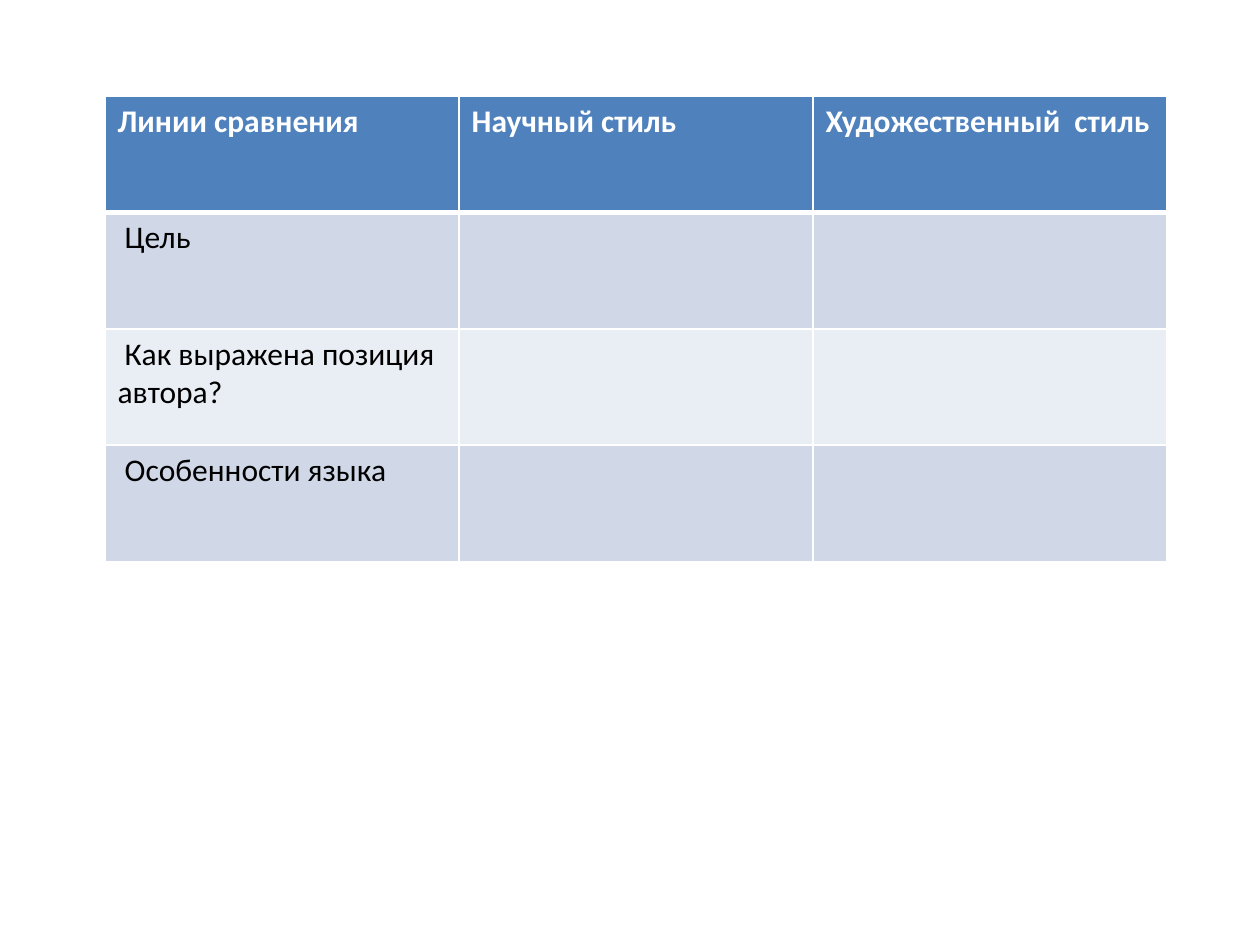
from dataclasses import dataclass

from lxml.etree import SubElement
from pptx import Presentation
from pptx.dml.color import RGBColor
from pptx.oxml.ns import qn
from pptx.util import Inches, Pt


@dataclass(frozen=True)
class Theme:
    """Colours, type and line widths of the slide."""
    font: str = "Calibri"
    size: int = 18
    header: str = "4F81BD"
    bands: tuple = ("D0D8E8", "E9EDF4")
    light: str = "FFFFFF"
    dark: str = "000000"
    thin: int = 1
    thick: int = 3


T = Theme()
W, H = Inches(10), Inches(7.5)
ROWS = [
    ["Линии сравнения", "Научный стиль", "Художественный  стиль"],
    [" Цель", "", ""],
    [" Как выражена позиция автора?", "", ""],
    [" Особенности языка", "", ""],
]


def add_text(tf, text, color=T.dark, size=T.size, bold=False):
    """Write one formatted run into the first paragraph."""
    r = tf.paragraphs[0].add_run()
    r.text = text
    r.font.name, r.font.size, r.font.bold = T.font, Pt(size), bold
    r.font.color.rgb = RGBColor.from_string(color)


def add_borders(cell, **widths):
    """Draw the cell's borders, before its fill is set."""
    tcPr = cell._tc.get_or_add_tcPr()
    for side in "LRTB":
        ln = SubElement(tcPr, qn(f"a:ln{side}"), w=str(Pt(widths.get(side, T.thin))))
        SubElement(SubElement(ln, qn("a:solidFill")), qn("a:srgbClr"), val=T.light)


def format_cell(cell, text, row):
    """Give a cell the text, borders and fill of its row."""
    header = row == 0
    sides = {0: {"B": T.thick}, 1: {"T": T.thick}}.get(row, {})
    add_borders(cell, **sides)
    cell.fill.solid()
    fill = T.header if header else T.bands[(row - 1) % len(T.bands)]
    cell.fill.fore_color.rgb = RGBColor.from_string(fill)
    if text:
        add_text(cell.text_frame, text, color=T.light if header else T.dark, bold=header)
    else:
        cell.text_frame.paragraphs[0].font.size = Pt(T.size)


def add_comparison(s, rows, x, y, w, h):
    """Place the comparison table on equal columns and rows in the box."""
    table = s.shapes.add_table(len(rows), len(rows[0]), x, y, w, h).table
    for i, texts in enumerate(rows):
        for j, text in enumerate(texts):
            format_cell(table.cell(i, j), text, i)


def main():
    """Build and save the slide."""
    prs = Presentation()
    prs.slide_width, prs.slide_height = W, H
    s = prs.slides.add_slide(prs.slide_layouts[6])
    add_comparison(s, ROWS, x=int(W / 12), y=int(H * 0.1015),
                   w=int(W * 0.843), h=int(H * 0.493))
    prs.save("out.pptx")


if __name__ == "__main__":
    main()
